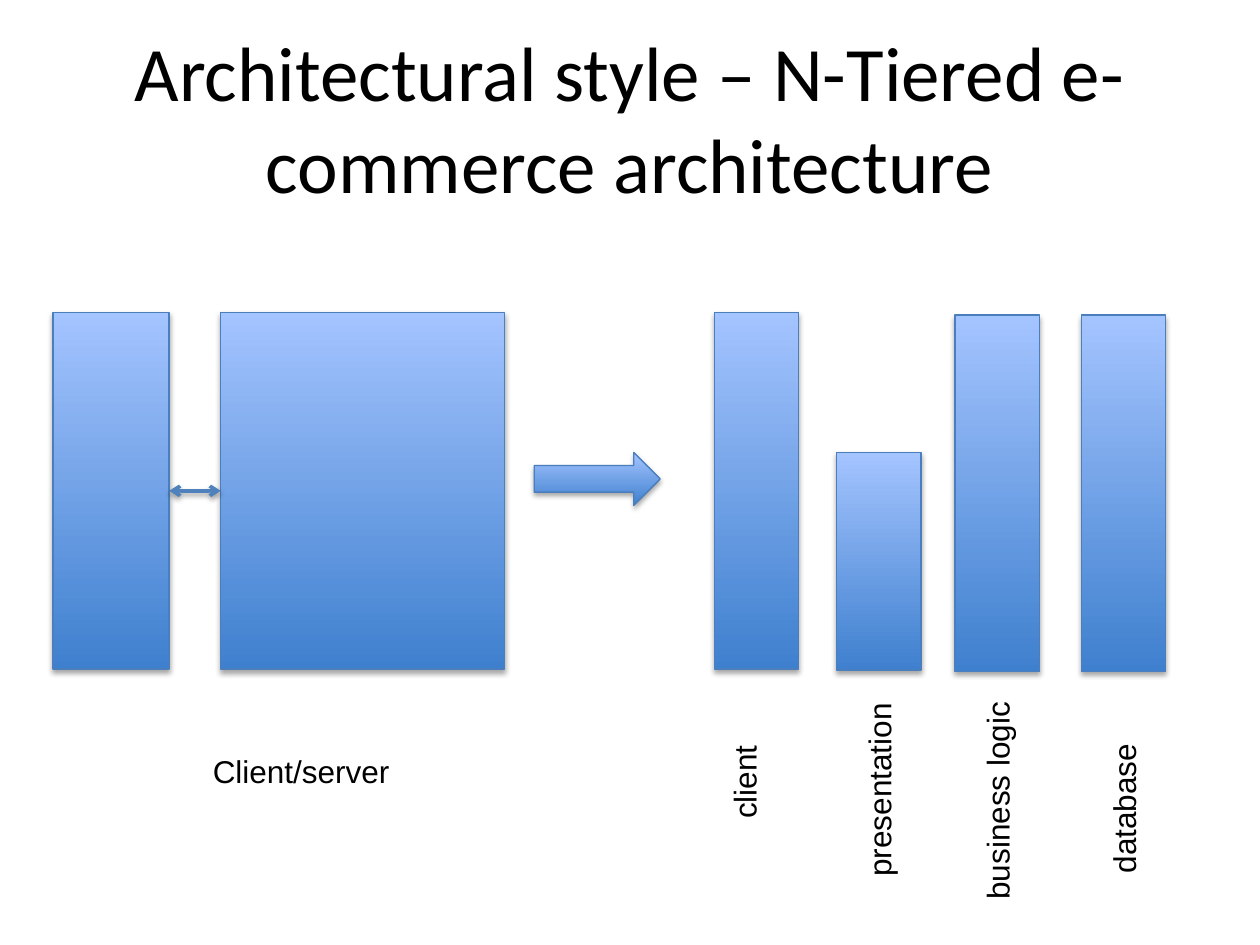
from pptx import Presentation
from pptx.dml.color import RGBColor
from pptx.enum.shapes import MSO_CONNECTOR, MSO_SHAPE
from pptx.enum.text import MSO_ANCHOR, MSO_AUTO_SIZE, PP_ALIGN
from pptx.oxml import parse_xml
from pptx.oxml.ns import nsdecls, qn
from pptx.util import Cm, Pt

RECT, ARROW = MSO_SHAPE.RECTANGLE, MSO_SHAPE.RIGHT_ARROW
LINE = MSO_CONNECTOR.STRAIGHT
MIDDLE, TOP = MSO_ANCHOR.MIDDLE, MSO_ANCHOR.TOP
CENTER, LEFT = PP_ALIGN.CENTER, PP_ALIGN.LEFT
GROW, FIXED = MSO_AUTO_SIZE.SHAPE_TO_FIT_TEXT, MSO_AUTO_SIZE.NONE

COLORS = {"dark": "3F80CE", "light": "A4C4FF", "edge": "4B7EBC",
          "link": "4F81BD", "text": "000000"}
TITLE = {
    "frame": {"word_wrap": True, "auto_size": FIXED, "vertical_anchor": MIDDLE},
    "para": {"alignment": CENTER},
    "font": {"name": "Calibri", "size": Pt(44)},
}
LABEL = {
    "frame": {"word_wrap": False, "auto_size": GROW, "vertical_anchor": TOP},
    "para": {"alignment": LEFT},
    "font": {"name": "Arial", "size": Pt(18)},
}


class Deck:
    def __init__(self, colors):
        self.colors = {key: RGBColor.from_string(hue) for key, hue in colors.items()}
        self.prs = Presentation()
        self.prs.slide_width, self.prs.slide_height = Cm(25.4), Cm(19.05)
        self.slide = self.prs.slides.add_slide(self.prs.slide_layouts[6])

    def apply(self, target, values):
        for key, value in values.items():
            setattr(target, key, value)

    def stroke(self, shape, color, width):
        shape.line.color.rgb = self.colors[color]
        shape.line.width = Pt(width)

    def shadow(self, shape, alpha, gap):
        props = shape.element.spPr
        for old in props.findall(qn("a:effectLst")):
            props.remove(old)
        props.append(parse_xml(
            f'<a:effectLst {nsdecls("a")}>'
            f'<a:outerShdw blurRad="{Pt(3.1)}" dist="{Pt(gap)}" dir="5400000" rotWithShape="0">'
            f'<a:srgbClr val="000000"><a:alpha val="{alpha * 1000}"/></a:srgbClr>'
            '</a:outerShdw></a:effectLst>'))

    def block(self, kind, *box):
        shape = self.slide.shapes.add_shape(kind, *map(Cm, box))
        shape.fill.gradient()
        shape.fill.gradient_angle = 90
        for stop, key in zip(shape.fill.gradient_stops, ("dark", "light")):
            stop.color.rgb = self.colors[key]
        for stop, place in zip(shape.fill.gradient_stops, (0, 1)):
            stop.position = place
        self.stroke(shape, "edge", 0.75)
        shape.shadow.inherit = False
        self.shadow(shape, 35, 1.8)
        return shape

    def text(self, words, style, *box, turn=0):
        shape = self.slide.shapes.add_textbox(*map(Cm, box))
        shape.rotation = turn
        frame = shape.text_frame
        para = frame.paragraphs[0]
        run = para.add_run()
        run.text = words
        for key, target in (("frame", frame), ("para", para), ("font", run.font)):
            self.apply(target, style[key])
        run.font.color.rgb = self.colors["text"]

    def link(self, start, end):
        line = self.slide.shapes.add_connector(LINE, 0, 0, 0, 0)
        line.begin_connect(start, 3)
        line.end_connect(end, 1)
        self.stroke(line, "link", 2)
        stroke = line.element.spPr.find(qn("a:ln"))
        for tip in ("headEnd", "tailEnd"):
            stroke.append(parse_xml(f'<a:{tip} {nsdecls("a")} type="arrow"/>'))
        self.shadow(line, 38, 1.6)


def main():
    deck = Deck(COLORS)
    deck.text("Architectural style – N-Tiered e-commerce architecture", TITLE,
              1.27, 0.76, 22.86, 3.18)
    deck.block(ARROW, 10.77, 9.12, 2.54, 1.07)

    tiers = [
        ("client", (14.4, 6.3, 1.7, 7.19), (14, 15.24, 2.01, 1.02)),
        ("presentation", (16.87, 9.12, 1.7, 4.39), (15.7, 15.39, 4.04, 1.02)),
        ("business logic", (19.25, 6.35, 1.7, 7.19), (17.83, 15.6, 4.55, 1.02)),
        ("database", (21.8, 6.35, 1.7, 7.19), (21.08, 15.77, 3.15, 1.02)),
    ]
    for name, bar, spot in tiers:
        deck.block(RECT, *bar)
        deck.text(name, LABEL, *spot, turn=270)

    client = deck.block(RECT, 1.07, 6.3, 2.34, 7.19)
    server = deck.block(RECT, 4.45, 6.3, 5.72, 7.19)
    deck.link(client, server)
    deck.text("Client/server", LABEL, 4.04, 15.04, 4.11, 1.02)
    deck.prs.save("out.pptx")


if __name__ == "__main__":
    main()
